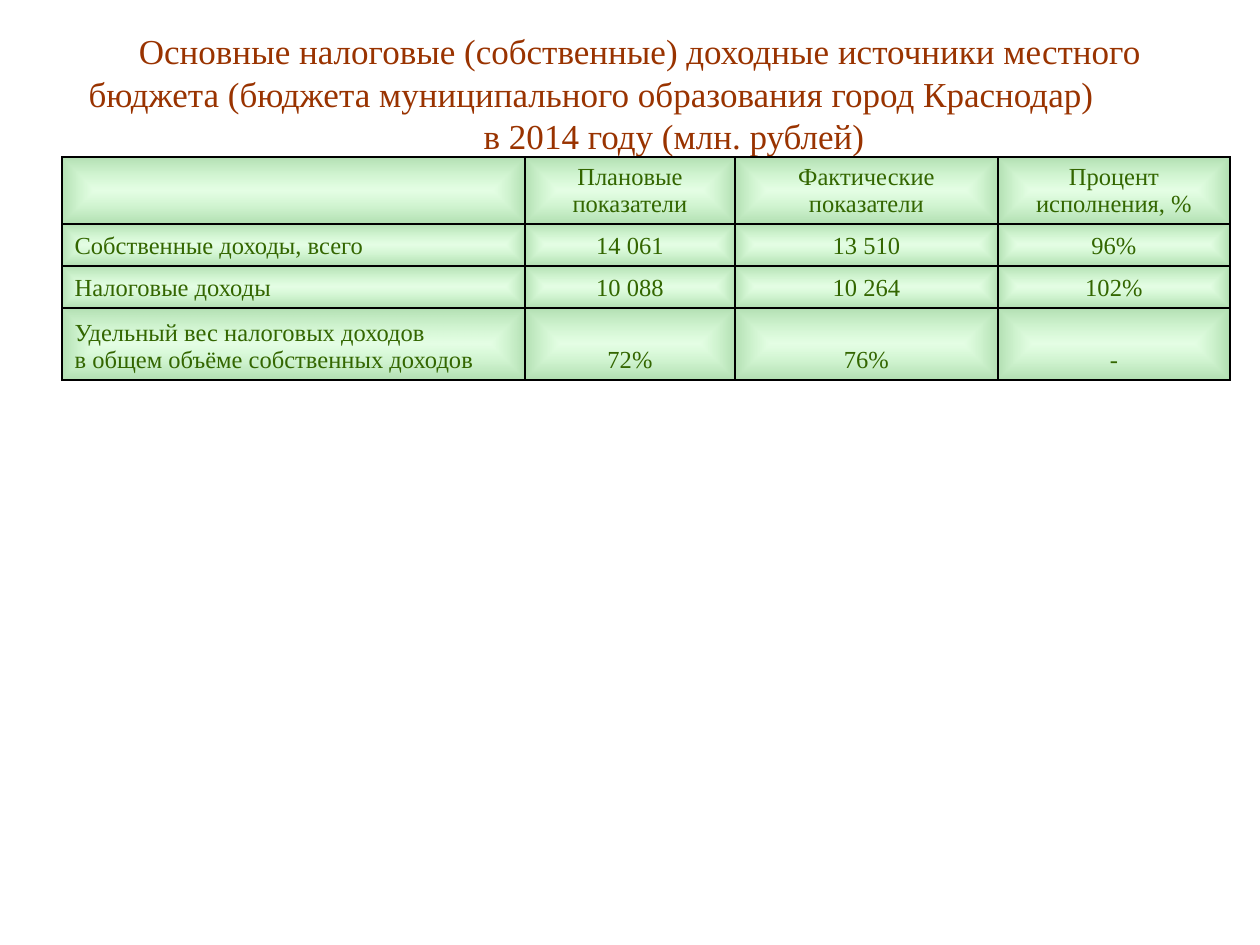
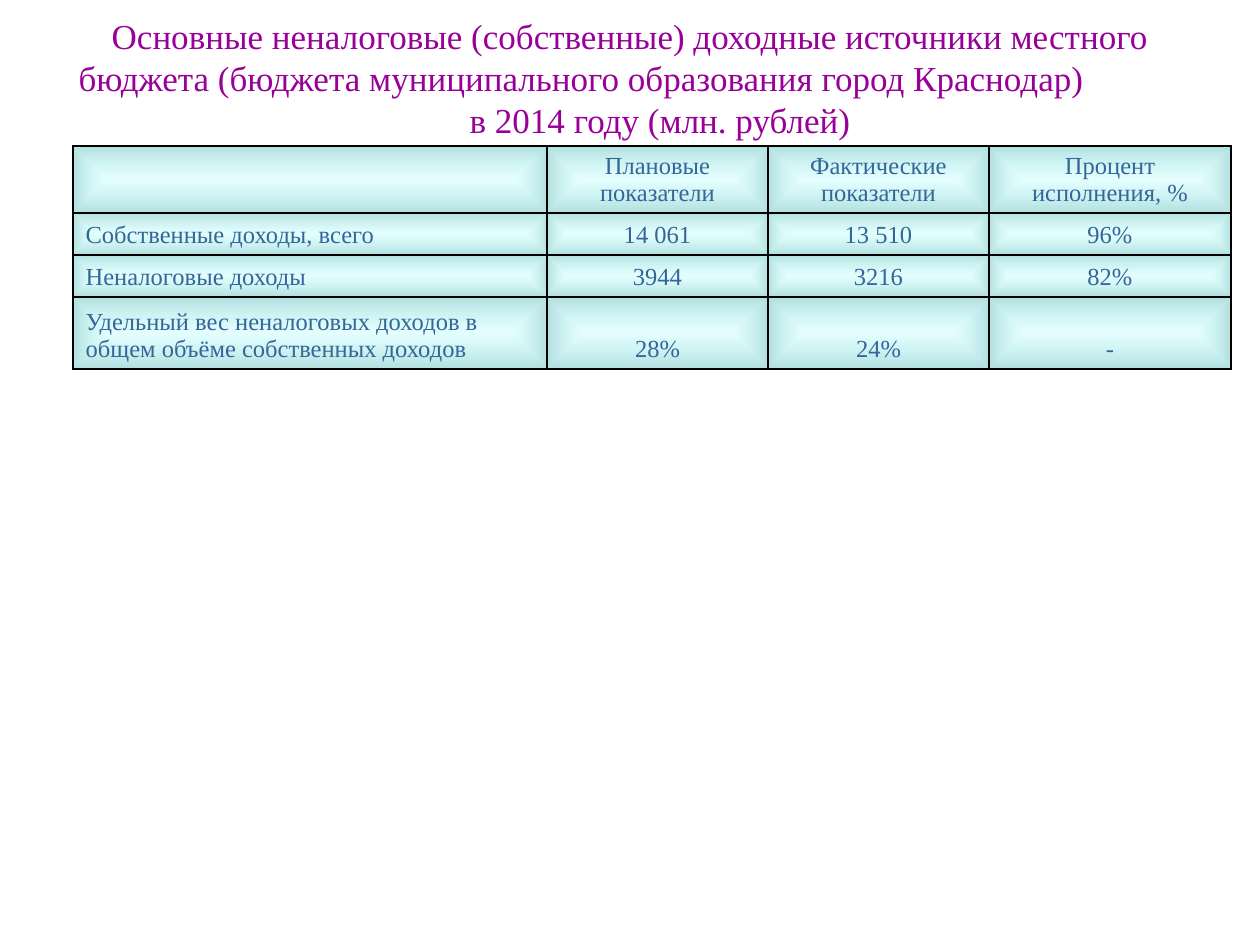
from lxml import etree
from pptx import Presentation
from pptx.dml.color import RGBColor
from pptx.enum.text import MSO_ANCHOR, MSO_AUTO_SIZE, PP_ALIGN
from pptx.oxml.ns import qn
from pptx.util import Emu, Pt

LEFT, CENTER = PP_ALIGN.LEFT, PP_ALIGN.CENTER
MIDDLE, BOTTOM = MSO_ANCHOR.MIDDLE, MSO_ANCHOR.BOTTOM
NO_FIT = MSO_AUTO_SIZE.NONE

FONT = "Times New Roman"
TITLE_SIZE, CELL_SIZE = 20, 14
BLACK = RGBColor(0x00, 0x00, 0x00)
RUST = RGBColor(0x99, 0x33, 0x00)
PURPLE = RGBColor(0x99, 0x00, 0x99)
GREEN_TEXT = RGBColor(0x33, 0x66, 0x00)
BLUE_TEXT = RGBColor(0x33, 0x66, 0x99)
GREEN_FILL = (RGBColor(0xCC, 0xFF, 0xCC), RGBColor(0xB2, 0xDF, 0xB2))
BLUE_FILL = (RGBColor(0xCC, 0xFF, 0xFF), RGBColor(0xB2, 0xDF, 0xDF))

HEADER = ["", "Плановые показатели", "Фактические показатели",
          "Процент исполнения, %"]
OWN_INCOME = ["Собственные доходы, всего", "14 061", "13 510", "96%"]
ROW_HEIGHTS = [67, 42, 42, 72]


def px(n):
    """Turn pixels into EMU."""
    return Emu(round(n * 914400 / 126))


def add_run(p, text, size, color):
    """Add one formatted run to a paragraph."""
    r = p.add_run()
    r.text = text
    r.font.name = FONT
    r.font.size = Pt(size)
    r.font.color.rgb = color


def add_title(slide, box, kind, color, year_indent):
    """Place the three-line title, its second line flush left."""
    sp = slide.shapes.title
    sp.left, sp.top, sp.width, sp.height = map(px, box)
    tf = sp.text_frame
    tf.word_wrap = True
    tf.auto_size = NO_FIT
    tf.vertical_anchor = MIDDLE
    lines = [
        (f"Основные {kind} (собственные) доходные источники местного", CENTER, 0),
        ("бюджета (бюджета муниципального образования город Краснодар)", LEFT, 3),
        ("в 2014 году (млн. рублей)", CENTER, year_indent),
    ]
    for i, (text, align, indent) in enumerate(lines):
        p = tf.add_paragraph() if i else tf.paragraphs[0]
        p.alignment = align
        p._p.get_or_add_pPr().set("marL", str(px(indent)))
        add_run(p, text, TITLE_SIZE, color)


def add_color(parent, color):
    """Append a solid colour element and return it."""
    return etree.SubElement(parent, qn("a:srgbClr"), val=str(color))


def style_cell(cell, fill):
    """Give a cell black borders and a gradient from its centre."""
    tc_pr = cell._tc.get_or_add_tcPr()
    for side in ("L", "R", "T", "B"):
        ln = etree.SubElement(tc_pr, qn(f"a:ln{side}"), w=str(Pt(1)))
        add_color(etree.SubElement(ln, qn("a:solidFill")), BLACK)
    grad = etree.SubElement(tc_pr, qn("a:gradFill"), rotWithShape="0")
    stops = etree.SubElement(grad, qn("a:gsLst"))
    inner, outer = [
        add_color(etree.SubElement(stops, qn("a:gs"), pos=pos), color)
        for pos, color in zip(("0", "100000"), fill)]
    etree.SubElement(inner, qn("a:alpha"), val="50000")
    shade = etree.SubElement(grad, qn("a:path"), path="shape")
    etree.SubElement(shade, qn("a:fillToRect"),
                     {side: "50000" for side in "ltrb"})


def add_income_table(slide, left, top, widths, rows, color, fill):
    """Add the income table with centred figures."""
    frame = slide.shapes.add_table(
        len(rows), len(widths), px(left), px(top),
        px(sum(widths)), px(sum(ROW_HEIGHTS)))
    table = frame.table
    table.first_row = table.horz_banding = False
    for column, width in zip(table.columns, widths):
        column.width = px(width)
    for row, height, texts in zip(table.rows, ROW_HEIGHTS, rows):
        row.height = px(height)
        for c, (cell, text) in enumerate(zip(row.cells, texts)):
            cell.vertical_anchor = BOTTOM
            style_cell(cell, fill)
            tf = cell.text_frame
            for i, line in enumerate(text.split("\n") if text else []):
                p = tf.add_paragraph() if i else tf.paragraphs[0]
                p.alignment = CENTER if c else LEFT
                add_run(p, line, CELL_SIZE, color)


def main():
    """Build both income slides."""
    prs = Presentation()
    prs.slide_width, prs.slide_height = px(1260), px(945)
    title_only = prs.slide_layouts[5]

    slide = prs.slides.add_slide(title_only)
    add_title(slide, (73, 30, 1134, 126), "налоговые", RUST, 68)
    add_income_table(slide, 62, 157, [463, 210, 263, 232], [
        HEADER,
        OWN_INCOME,
        ["Налоговые доходы", "10 088", "10 264", "102%"],
        ["Удельный вес налоговых доходов\nв общем объёме собственных доходов",
         "72%", "76%", "-"],
    ], GREEN_TEXT, GREEN_FILL)

    slide = prs.slides.add_slide(title_only)
    add_title(slide, (63, 20, 1134, 116), "неналоговые", PURPLE, 60)
    add_income_table(slide, 73, 146, [474, 221, 221, 242], [
        HEADER,
        OWN_INCOME,
        ["Неналоговые доходы", "3944", "3216", "82%"],
        ["Удельный вес неналоговых доходов в общем объёме собственных доходов",
         "28%", "24%", "-"],
    ], BLUE_TEXT, BLUE_FILL)

    prs.save("out.pptx")


if __name__ == "__main__":
    main()
